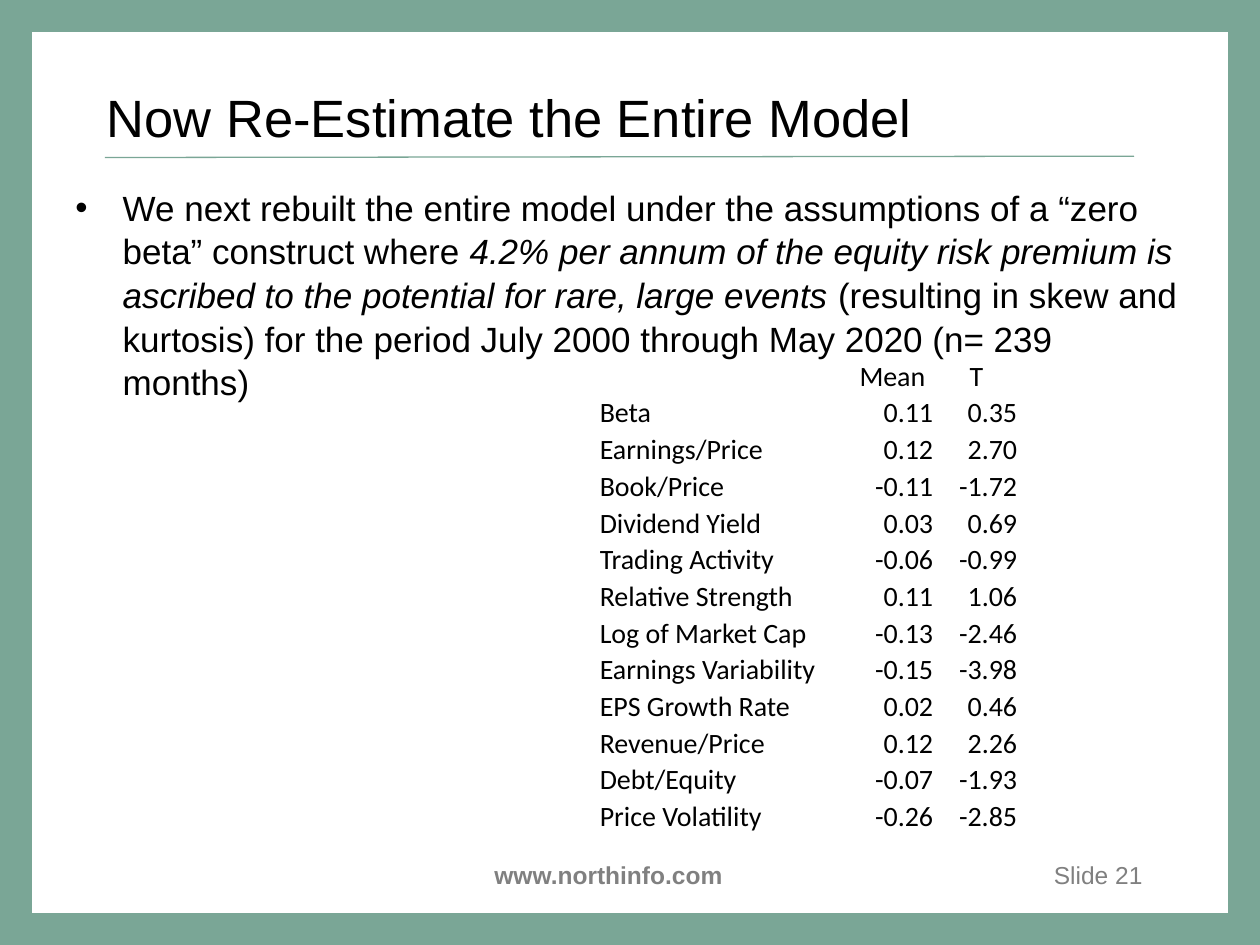
from typing import NamedTuple

from lxml.etree import SubElement
from pptx import Presentation
from pptx.dml.color import RGBColor
from pptx.enum.shapes import MSO_CONNECTOR, MSO_SHAPE
from pptx.enum.text import MSO_ANCHOR as ANCHOR, PP_ALIGN as ALIGN
from pptx.oxml.ns import qn
from pptx.util import Pt

GREEN = RGBColor(0x7A, 0xA6, 0x96)
GRAY = RGBColor(0x80, 0x80, 0x80)
BLACK = RGBColor(0, 0, 0)
NO_STYLE = "{2D5ABB26-0587-4C30-8999-92F81FD0307C}"
COL_W, ROW_H = 48, 21


class Box(NamedTuple):
    left: float
    top: float
    width: float
    height: float

    def points(self) -> list:
        return [Pt(v) for v in self]


class Factor(NamedTuple):
    name: str
    mean: str
    t: str
    span: int = 3


FACTORS = [
    Factor("Beta", "0.11", "0.35", 1),
    Factor("Earnings/Price", "0.12", "2.70"),
    Factor("Book/Price", "-0.11", "-1.72", 2),
    Factor("Dividend Yield", "0.03", "0.69", 2),
    Factor("Trading Activity", "-0.06", "-0.99"),
    Factor("Relative Strength", "0.11", "1.06"),
    Factor("Log of Market Cap", "-0.13", "-2.46"),
    Factor("Earnings Variability", "-0.15", "-3.98"),
    Factor("EPS Growth Rate", "0.02", "0.46"),
    Factor("Revenue/Price", "0.12", "2.26"),
    Factor("Debt/Equity", "-0.07", "-1.93", 2),
    Factor("Price Volatility", "-0.26", "-2.85"),
]


def write(p, text: str, *, size: float, font: str = "Arial", color: RGBColor = BLACK,
          bold: bool = False, italic: bool = False, align=ALIGN.LEFT) -> None:
    p.alignment = align
    r = p.add_run()
    r.text = text
    f = r.font
    f.size, f.name, f.bold, f.italic = Pt(size), font, bold, italic
    f.color.rgb = color


def add_box(s, box: Box, anchor=ANCHOR.TOP):
    tf = s.shapes.add_textbox(*box.points()).text_frame
    tf.word_wrap = True
    tf.vertical_anchor = anchor
    return tf.paragraphs[0]


def add_frame(s) -> None:
    sp = s.shapes.add_shape(MSO_SHAPE.RECTANGLE, *Box(9, 9, 702, 522).points())
    sp.shadow.inherit = False
    sp.fill.background()
    sp.line.color.rgb = GREEN
    sp.line.width = Pt(18)
    SubElement(sp.line._get_or_add_ln(), qn("a:miter"), lim="800000")


def add_rule(s) -> None:
    cx = s.shapes.add_connector(MSO_CONNECTOR.STRAIGHT, Pt(60), Pt(90), Pt(648), Pt(89.25))
    cx.line.color.rgb = GREEN
    cx.line.width = Pt(0.75)
    SubElement(cx._element.spPr, qn("a:effectLst"))


def add_body(s) -> None:
    p = add_box(s, Box(36, 102, 648, 356.25))
    p.line_spacing = 1.04
    pPr = p._p.get_or_add_pPr()
    pPr.set("marL", str(Pt(27)))
    pPr.set("indent", str(Pt(-27)))
    SubElement(pPr, qn("a:buFont"), typeface="Arial")
    SubElement(pPr, qn("a:buChar"), char="•")
    write(p, "We next rebuilt the entire model under the assumptions of a “zero beta” "
             "construct where ", size=20)
    write(p, "4.2% per annum of the equity risk premium is ascribed to the potential "
             "for rare, large events", size=20, italic=True)
    write(p, " (resulting in skew and kurtosis) for the period July 2000 through "
             "May 2020 (n= 239 months)", size=20)


def fill_cell(cell, text: str, align) -> None:
    cell.fill.background()
    cell.vertical_anchor = ANCHOR.BOTTOM
    cell.margin_left = cell.margin_right = cell.margin_top = Pt(0.75)
    cell.margin_bottom = 0
    p = cell.text_frame.paragraphs[0]
    if text:
        write(p, text, size=16, font="Calibri", align=align)
    else:
        SubElement(p._p, qn("a:endParaRPr"), sz="1600")


def add_factor_table(s) -> None:
    n_rows, n_cols = len(FACTORS) + 1, 5
    box = Box(342, 204, COL_W * n_cols, ROW_H * n_rows)
    table = s.shapes.add_table(n_rows, n_cols, *box.points()).table
    table.first_row = table.horz_banding = False
    table._tbl.tblPr.find(qn("a:tableStyleId")).text = NO_STYLE
    for col in table.columns:
        col.width = Pt(COL_W)
    for i, row in enumerate([Factor("", "Mean", "T", 1), *FACTORS]):
        table.rows[i].height = Pt(ROW_H)
        number_align = ALIGN.RIGHT if i else ALIGN.CENTER
        for j, text in enumerate((row.name, "", "", row.mean, row.t)):
            fill_cell(table.cell(i, j), text, number_align if j > 2 else ALIGN.LEFT)
        if row.span > 1:
            table.cell(i, 0).merge(table.cell(i, row.span - 1))


def main() -> None:
    prs = Presentation()
    prs.slide_width, prs.slide_height = Pt(720), Pt(540)
    s = prs.slides.add_slide(prs.slide_layouts[6])
    add_frame(s)
    write(add_box(s, Box(255.5, 488, 184.5, 24)), "www.northinfo.com",
          size=14, color=GRAY, bold=True, align=ALIGN.CENTER)
    write(add_box(s, Box(570, 488, 90, 24)), "Slide 21",
          size=14, color=GRAY, align=ALIGN.RIGHT)
    add_rule(s)
    write(add_box(s, Box(54, 42, 648, 49.5), ANCHOR.MIDDLE),
          "Now Re-Estimate the Entire Model", size=30)
    add_body(s)
    add_factor_table(s)
    prs.save("out.pptx")


if __name__ == "__main__":
    main()
